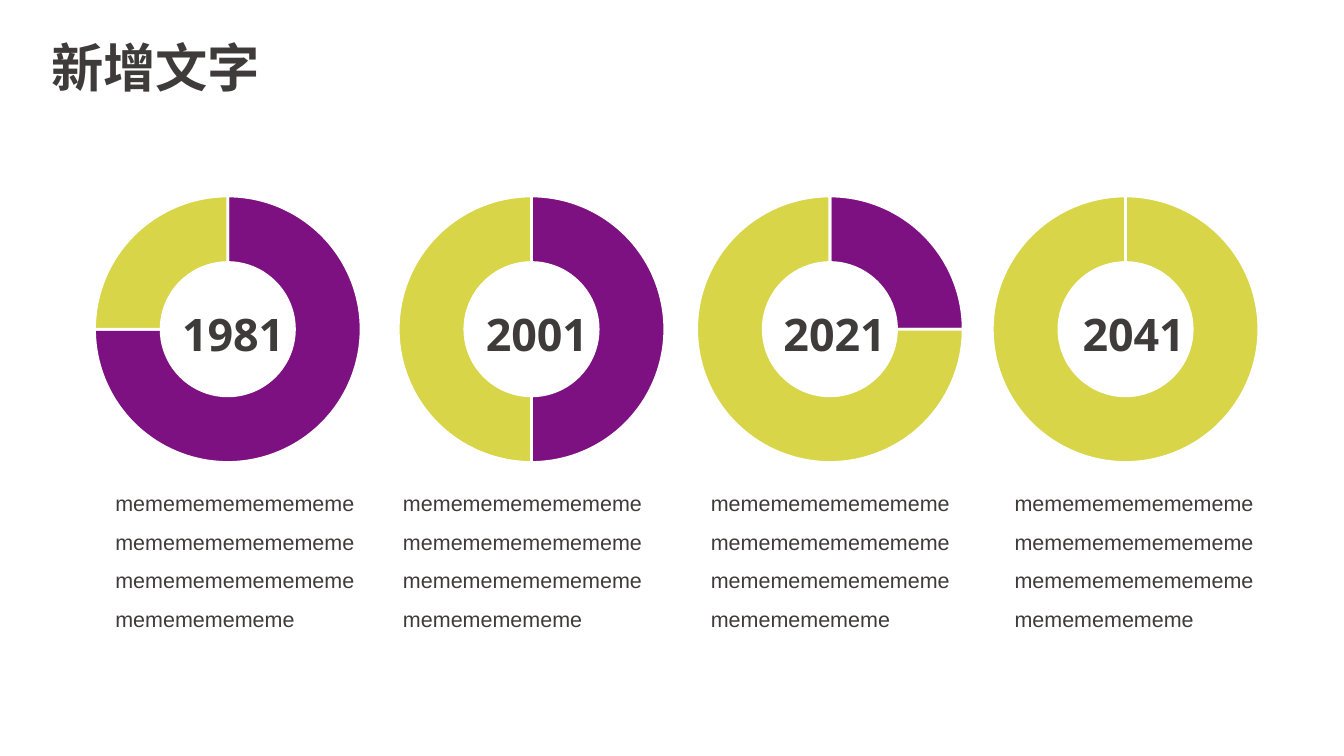
"""Build a slide with four yearly doughnut charts and their captions."""
from pptx import Presentation
from pptx import util as u
from pptx.chart import data as chart_data
from pptx.dml import color
from pptx.enum import chart as chart_enum, text
from pptx.oxml import ns

INK, PURPLE, LIME, WHITE = "3F3B3A", "7D1181", "D8D548", "FFFFFF"


def rgb(value):
    return color.RGBColor.from_string(value)


def style(font, name, size, bold=False):
    font.name = name
    font.size = u.Pt(size)
    font.bold = bold
    font.color.rgb = rgb(INK)


deck = Presentation()
deck.slide_width = u.Inches(10)
deck.slide_height = u.Inches(10 * 9 / 16)
page = deck.slides.add_slide(deck.slide_layouts[5])

title = page.shapes.title
title.left, title.top = u.Inches(0.28), u.Inches(0.16)
title.width, title.height = u.Inches(9.32), u.Inches(0.67)
frame = title.text_frame
frame.text = "新增文字"
frame.vertical_anchor = text.MSO_ANCHOR.BOTTOM
frame.margin_left = frame.margin_right = u.Inches(0.1)
frame.margin_top = frame.margin_bottom = u.Inches(0.1)
para = frame.paragraphs[0]
para.alignment = text.PP_ALIGN.LEFT
style(para.font, "Arial", 28, True)

columns = [
    ("1981", 75, 0, 1.2, 1.07, 0.76),
    ("2001", 50, 2.26, 3.47, 1.05, 2.9),
    ("2021", 25, 4.48, 5.69, 1.04, 5.19),
    ("2041", 0, 6.68, 7.92, 1.03, 7.45),
]
caption_lines = ["me" * 8] * 3 + ["me" * 6]

for year, share, chart_left, year_left, year_width, caption_left in columns:
    values = chart_data.CategoryChartData()
    values.categories = ["1", "2"]
    values.add_series("Series 1", (share, 100 - share))
    chart = page.shapes.add_chart(
        chart_enum.XL_CHART_TYPE.DOUGHNUT,
        u.Inches(chart_left), u.Inches(1.32), u.Inches(3.39), u.Inches(2.26), values,
    ).chart
    chart.has_title = False
    chart.has_legend = False
    style(chart.font, "Arial", 10)
    plot = chart.plots[0]
    plot.vary_by_categories = True
    for hole in chart.element.iter(ns.qn("c:holeSize")):
        hole.set("val", "75")
    for index, fill in enumerate((PURPLE, LIME)):
        slice_format = plot.series[0].points[index].format
        slice_format.fill.solid()
        slice_format.fill.fore_color.rgb = rgb(fill)
        slice_format.line.color.rgb = rgb(WHITE)
        slice_format.line.width = u.Pt(1.5)

    box = page.shapes.add_textbox(
        u.Inches(year_left), u.Inches(2.22), u.Inches(year_width), u.Inches(0.52))
    frame = box.text_frame
    frame.word_wrap = True
    frame.vertical_anchor = text.MSO_ANCHOR.MIDDLE
    frame.margin_top = frame.margin_bottom = u.Inches(0.1)
    frame.text = year
    para = frame.paragraphs[0]
    para.alignment = text.PP_ALIGN.CENTER
    style(para.font, "Open Sans", 24, True)

    box = page.shapes.add_textbox(
        u.Inches(caption_left), u.Inches(3.58), u.Inches(2.01), u.Inches(1.37))
    frame = box.text_frame
    frame.word_wrap = True
    frame.vertical_anchor = text.MSO_ANCHOR.MIDDLE
    frame.margin_top, frame.margin_bottom = 0, u.Inches(0.28)
    frame.text = "\n".join(caption_lines)
    for para in frame.paragraphs:
        para.line_spacing = 1.5
        style(para.font, "Arial", 11.5)

deck.save("out.pptx")
